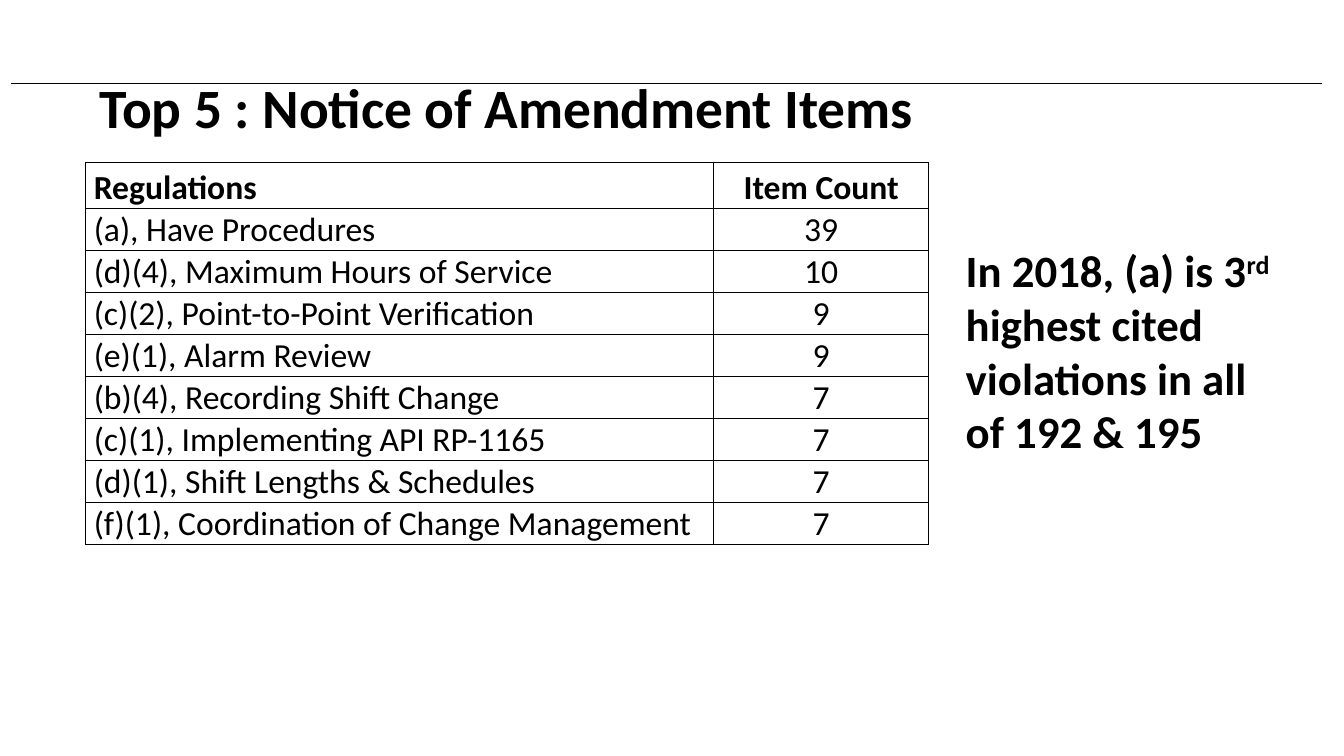
from dataclasses import dataclass

from lxml import etree
from pptx import Presentation
from pptx import util as u
from pptx.dml.color import RGBColor
from pptx.enum import shapes, text
from pptx.oxml import ns


@dataclass(frozen=True)
class Theme:
    font: str = "Calibri"
    ink: RGBColor = RGBColor(0, 0, 0)
    title: float = 39.6
    note: float = 32
    body: float = 24
    rule: float = 0.75
    border: float = 1


THEME = Theme()
REGULATIONS = [
    ("Regulations", "Item Count"),
    ("(a), Have Procedures", "39"),
    ("(d)(4), Maximum Hours of Service", "10"),
    ("(c)(2), Point-to-Point Verification", "9"),
    ("(e)(1), Alarm Review", "9"),
    ("(b)(4), Recording Shift Change", "7"),
    ("(c)(1), Implementing API RP-1165", "7"),
    ("(d)(1), Shift Lengths & Schedules", "7"),
    ("(f)(1), Coordination of Change Management", "7"),
]


def apply(obj, **values):
    for name, value in values.items():
        setattr(obj, name, value)


def place(sp, box):
    apply(sp, **dict(zip(("left", "top", "width", "height"), map(u.Inches, box))))


def add_run(p, words, size, bold=True):
    r = p.add_run()
    r.text = words
    apply(r.font, name=THEME.font, size=u.Pt(size), bold=bold)
    r.font.color.rgb = THEME.ink
    return r


def add_rule(s, left, top, width):
    start, end, y = u.Inches(left), u.Inches(left + width), u.Inches(top)
    line = s.shapes.add_connector(shapes.MSO_CONNECTOR.STRAIGHT, start, y, end, y)
    line.line.color.rgb = THEME.ink
    line.line.width = u.Pt(THEME.rule)
    etree.SubElement(line._element.spPr, ns.qn("a:effectLst"))


def add_title(s, box, words):
    sp = s.shapes.title
    place(sp, box)
    tf = sp.text_frame
    apply(tf, word_wrap=True, auto_size=text.MSO_AUTO_SIZE.NONE,
          vertical_anchor=text.MSO_ANCHOR.MIDDLE)
    p = tf.paragraphs[0]
    p.alignment = text.PP_ALIGN.CENTER
    add_run(p, words, THEME.title)


def add_borders(cell):
    tcPr = cell._tc.get_or_add_tcPr()
    # Borders come before the fill in the cell properties
    for i, side in enumerate(("lnL", "lnR", "lnT", "lnB")):
        ln = etree.Element(ns.qn(f"a:{side}"), w=str(u.Pt(THEME.border)))
        fill = etree.SubElement(ln, ns.qn("a:solidFill"))
        etree.SubElement(fill, ns.qn("a:srgbClr"), val=str(THEME.ink))
        tcPr.insert(i, ln)


def add_regulations(s, box, rows, widths, header_height, row_height):
    frame = s.shapes.add_table(len(rows), len(widths), *map(u.Inches, box))
    table = frame.table
    apply(table, first_row=False, horz_banding=False)
    for column, width in zip(table.columns, widths):
        column.width = u.Inches(width)
    for i, values in enumerate(rows):
        table.rows[i].height = u.Inches(row_height if i else header_height)
        for j, value in enumerate(values):
            cell = table.cell(i, j)
            cell.fill.background()
            apply(cell, margin_left=u.Inches(0.01 if j else 0.08),
                  margin_right=u.Inches(0.01), margin_top=u.Inches(0.01),
                  margin_bottom=0, vertical_anchor=text.MSO_ANCHOR.BOTTOM)
            p = cell.text_frame.paragraphs[0]
            p.alignment = text.PP_ALIGN.CENTER if j else text.PP_ALIGN.LEFT
            add_run(p, value, THEME.body, bold=i == 0)
            add_borders(cell)


def add_note(s, box):
    tf = s.shapes.add_textbox(*map(u.Inches, box)).text_frame
    apply(tf, word_wrap=True, auto_size=text.MSO_AUTO_SIZE.SHAPE_TO_FIT_TEXT)
    p = tf.paragraphs[0]
    add_run(p, "In 2018, (a) is 3", THEME.note)
    ordinal = add_run(p, "rd", THEME.note)
    ordinal._r.get_or_add_rPr().set("baseline", "30000")
    add_run(p, " highest cited violations in all of 192 & 195", THEME.note)


def main():
    prs = Presentation()
    apply(prs, slide_width=u.Inches(13.33), slide_height=u.Inches(7.5))
    s = prs.slides.add_slide(prs.slide_layouts.get_by_name("Title Only"))

    # Heading
    add_rule(s, 0.11, 0.83, 13)
    add_title(s, (0.82, 0.68, 8.41, 0.74), "Top 5 : Notice of Amendment Items")

    # Item counts and the remark beside them
    add_regulations(s, (0.85, 1.61, 8.36, 3.74), REGULATIONS,
                    widths=(6.23, 2.13), header_height=0.46, row_height=0.41)
    add_note(s, (9.48, 2.36, 3.41, 2.26))

    prs.save("out.pptx")


if __name__ == "__main__":
    main()
